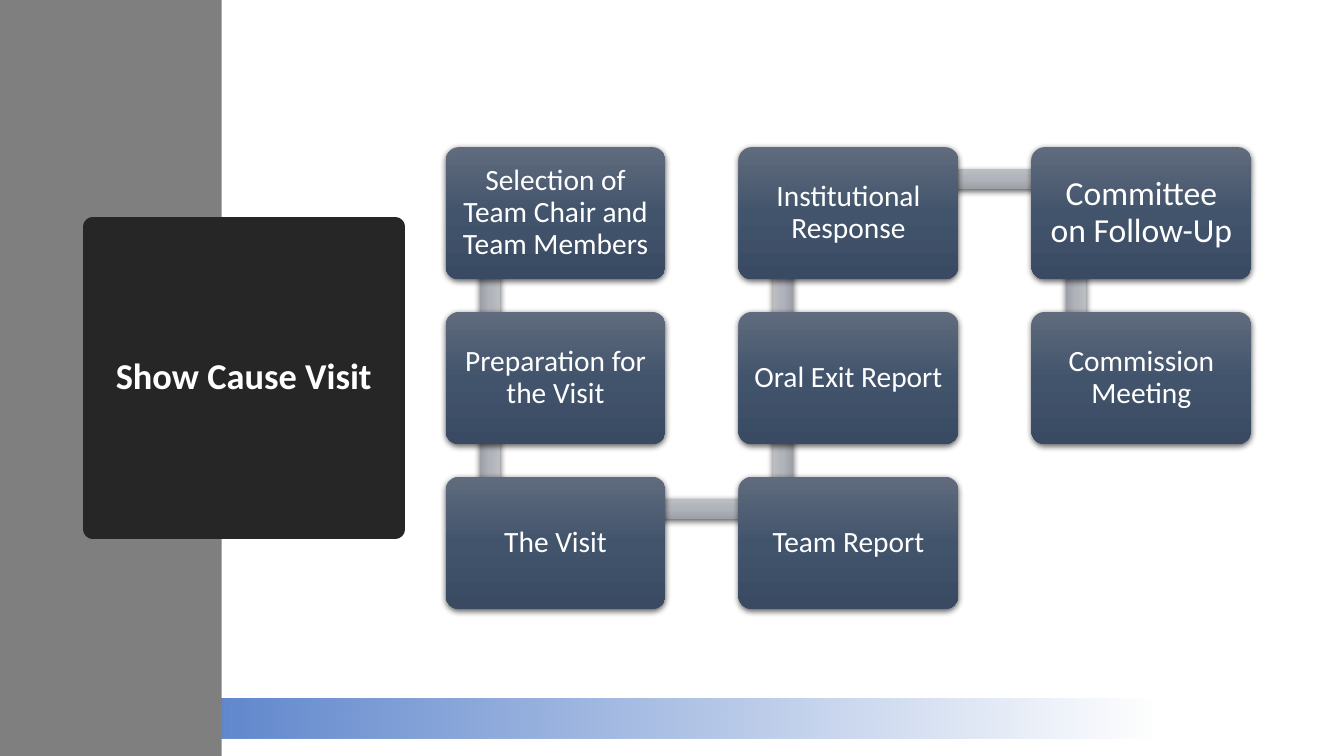
from dataclasses import dataclass
from math import atan2, degrees, hypot

from lxml import etree
from pptx import Presentation
from pptx.dml.color import RGBColor
from pptx.enum.shapes import MSO_SHAPE
from pptx.enum.text import MSO_ANCHOR, MSO_AUTO_SIZE, PP_ALIGN
from pptx.oxml import parse_xml
from pptx.oxml.ns import nsdecls, qn
from pptx.util import Inches, Pt

RECTANGLE = MSO_SHAPE.RECTANGLE
ROUNDED = MSO_SHAPE.ROUNDED_RECTANGLE
MIDDLE = MSO_ANCHOR.MIDDLE
CENTER = PP_ALIGN.CENTER
FIXED_SIZE = MSO_AUTO_SIZE.NONE

WHITE = RGBColor(0xFF, 0xFF, 0xFF)
PANEL_GRAY = RGBColor(0x7F, 0x7F, 0x7F)
TITLE_BLACK = RGBColor(0x26, 0x26, 0x26)
BAND_BLUE = RGBColor(0x44, 0x72, 0xC4)
STEP_COLORS = [RGBColor(0x60, 0x6B, 0x7D), RGBColor(0x42, 0x54, 0x6C), RGBColor(0x39, 0x4A, 0x62)]
LINK_COLORS = [RGBColor(0xBA, 0xBD, 0xC2), RGBColor(0xB0, 0xB3, 0xBA), RGBColor(0x9C, 0x9F, 0xA6)]

FONT = "Calibri"
DOWNWARD = 270
RIGHTWARD = 0

GRID_LEFT, GRID_TOP = 4.42, 1.46
COLUMN_PITCH, ROW_PITCH = 2.905, 1.635
STEP_WIDTH, STEP_HEIGHT = 2.18, 1.31
JOINT_X, JOINT_Y = 0.44, 0.32
LINK_THICKNESS = 0.2

SHADOW = (
    '<a:outerShdw blurRad="57150" dist="19050" dir="5400000" algn="ctr" rotWithShape="0">'
    '<a:srgbClr val="000000"><a:alpha val="63000"/></a:srgbClr></a:outerShdw>'
)
SOFT_EDGE = '<a:softEdge rad="12700"/>'


@dataclass(frozen=True)
class Step:
    text: str
    column: int
    row: int
    size: float = 21

    @property
    def left(self) -> float:
        return GRID_LEFT + self.column * COLUMN_PITCH

    @property
    def top(self) -> float:
        return GRID_TOP + self.row * ROW_PITCH


STEPS = [
    Step("Selection of Team Chair and Team Members", 0, 0),
    Step("Preparation for the Visit", 0, 1),
    Step("The Visit", 0, 2),
    Step("Team Report", 1, 2),
    Step("Oral Exit Report", 1, 1),
    Step("Institutional Response", 1, 0),
    Step("Committee on Follow-Up", 2, 0, size=24),
    Step("Commission Meeting", 2, 1),
]


def add_block(shapes, kind, left: float, top: float, width: float, height: float):
    block = shapes.add_shape(kind, Inches(left), Inches(top), Inches(width), Inches(height))
    block.shadow.inherit = False
    block.line.fill.background()
    return block


def fill_gradient(shape, colors: list[RGBColor], angle: float) -> None:
    """Fill with evenly spaced colour stops; the angle runs counter-clockwise."""
    shape.fill.gradient()
    shape.fill.gradient_angle = angle
    stops = shape._element.spPr.find(".//" + qn("a:gsLst"))
    for stop in list(stops):
        stops.remove(stop)
    for index, color in enumerate(colors):
        position = round(100000 * index / (len(colors) - 1))
        stop = etree.SubElement(stops, qn("a:gs"), pos=str(position))
        etree.SubElement(stop, qn("a:srgbClr"), val=str(color))


def add_effect(shape, effect: str) -> None:
    effects = shape._element.spPr.find(qn("a:effectLst"))
    wrapper = parse_xml(f"<a:effectLst {nsdecls('a')}>{effect}</a:effectLst>")
    effects.append(wrapper[0])


def write(shape, text: str, *, size: float, bold: bool = False, inset: float = 0.1) -> None:
    frame = shape.text_frame
    frame.word_wrap = True
    frame.auto_size = FIXED_SIZE
    frame.vertical_anchor = MIDDLE
    frame.margin_left = frame.margin_right = Inches(inset)
    frame.margin_top = frame.margin_bottom = Inches(inset)
    frame.text = text
    paragraph = frame.paragraphs[0]
    paragraph.alignment = CENTER
    paragraph.line_spacing = 0.9
    font = paragraph.runs[0].font
    font.name = FONT
    font.size = Pt(size)
    font.bold = bold
    font.color.rgb = WHITE


def add_backdrop(shapes) -> None:
    band = add_block(shapes, RECTANGLE, 0.49, 6.93, 10.97, 0.4)
    fill_gradient(band, [BAND_BLUE, WHITE], RIGHTWARD)
    add_effect(band, SOFT_EDGE)
    panel = add_block(shapes, RECTANGLE, 0, 0, 2.2, 7.5)
    panel.fill.solid()
    panel.fill.fore_color.rgb = PANEL_GRAY


def format_title(shapes) -> None:
    title = shapes.title
    title.left, title.top = Inches(0.92), Inches(2.25)
    title.width = title.height = Inches(3)
    title.fill.solid()
    title.fill.fore_color.rgb = TITLE_BLACK
    title.line.color.rgb = TITLE_BLACK
    title.line.width = Pt(13.75)
    etree.SubElement(title.line._ln, qn("a:round"))
    write(title, "Show Cause Visit", size=26, bold=True)
    # Bring the title in front of the backdrop.
    shapes._spTree.append(title._element)


def add_link(shapes, start: Step, end: Step) -> None:
    """Lay a bar between the joints of two steps, turned in the direction of travel."""
    across, down = end.left - start.left, end.top - start.top
    length = hypot(across, down)
    center_x = (start.left + end.left) / 2 + JOINT_X
    center_y = (start.top + end.top) / 2 + JOINT_Y
    link = add_block(shapes, RECTANGLE, center_x - length / 2,
                     center_y - LINK_THICKNESS / 2, length, LINK_THICKNESS)
    link.rotation = degrees(atan2(down, across)) % 360
    fill_gradient(link, LINK_COLORS, DOWNWARD)
    add_effect(link, SHADOW)


def add_step(shapes, step: Step) -> None:
    box = add_block(shapes, ROUNDED, step.left, step.top, STEP_WIDTH, STEP_HEIGHT)
    box.adjustments[0] = 0.1
    fill_gradient(box, STEP_COLORS, DOWNWARD)
    add_effect(box, SHADOW)
    write(box, step.text, size=step.size, inset=0.09)


def main() -> None:
    presentation = Presentation()
    presentation.slide_width = Inches(13.33)
    presentation.slide_height = Inches(7.5)
    title_only = presentation.slide_layouts[5]
    shapes = presentation.slides.add_slide(title_only).shapes

    add_backdrop(shapes)
    format_title(shapes)
    for start, end in zip(STEPS, STEPS[1:]):
        add_link(shapes, start, end)
    for step in STEPS:
        add_step(shapes, step)

    presentation.save("out.pptx")


if __name__ == "__main__":
    main()
